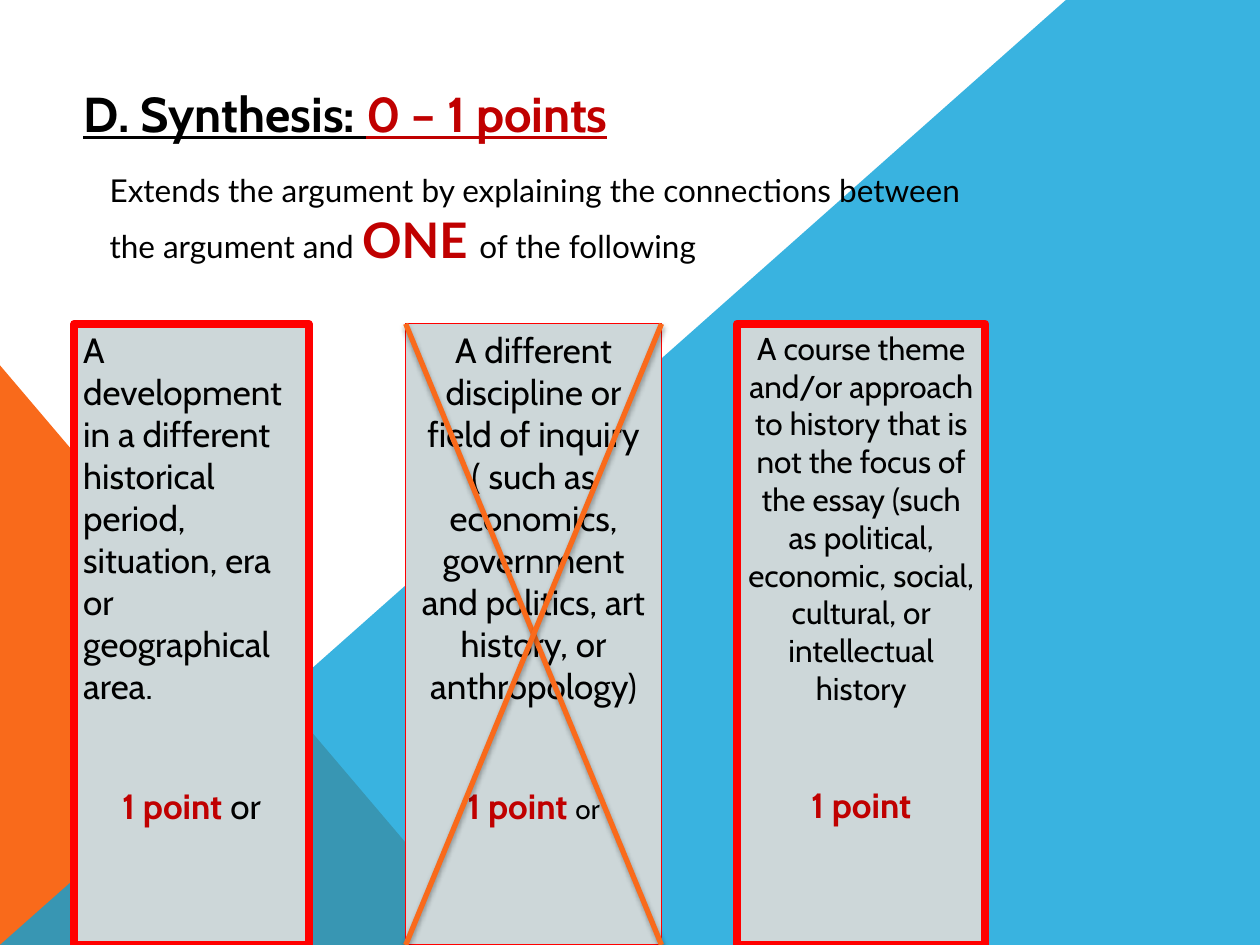
from lxml import etree
from pptx import Presentation
from pptx.dml.color import RGBColor
from pptx.enum.shapes import MSO_CONNECTOR, MSO_SHAPE
from pptx.enum.text import MSO_ANCHOR, MSO_AUTO_SIZE, PP_ALIGN
from pptx.oxml import parse_xml
from pptx.oxml.ns import nsdecls, qn
from pptx.util import Inches, Pt

RECTANGLE, TRIANGLE = MSO_SHAPE.RECTANGLE, MSO_SHAPE.RIGHT_TRIANGLE
STRAIGHT = MSO_CONNECTOR.STRAIGHT
LEFT, CENTER = PP_ALIGN.LEFT, PP_ALIGN.CENTER
TOP = MSO_ANCHOR.TOP
FIXED, GROW = MSO_AUTO_SIZE.NONE, MSO_AUTO_SIZE.SHAPE_TO_FIT_TEXT

COLORS = {
    "orange": "F96A1B",
    "blue": "08A1D9",
    "panel": "CDD7D9",
    "red": "FF0000",
    "accent": "C00000",
    "text": "000000",
}
FORMATS = {
    "title": {"name": "Cabin", "size": Pt(28), "bold": True, "underline": True},
    "lead": {"name": "Lato", "size": Pt(18), "bold": False},
    "emphasis": {"name": "Lato", "size": Pt(28), "bold": True},
    "option": {"name": "Cabin", "size": Pt(20), "bold": False},
    "small option": {"name": "Cabin", "size": Pt(18), "bold": False},
    "tiny option": {"name": "Cabin", "size": Pt(16), "bold": False},
    "points": {"name": "Cabin", "size": Pt(20), "bold": True},
}
TIGHT = (0.07, 0.04)
NORMAL = (0.1, 0.05)
PANEL_TOP, PANEL_HEIGHT = 2.57, 4.93
POINTS_GAP = 44


class SlideStyle:
    """Holds the style and the current slide, and draws each kind of element."""

    def __init__(self, page):
        self.page = page

    def color(self, name):
        return RGBColor.from_string(COLORS[name])

    def paint(self, shape, fill, line=None, width=0):
        shape.shadow.inherit = False
        shape.fill.solid()
        shape.fill.fore_color.rgb = self.color(fill)
        if line:
            shape.line.color.rgb = self.color(line)
            shape.line.width = Pt(width)
        else:
            shape.line.fill.background()

    def shape(self, kind, area, fill, line=None, width=0):
        shape = self.page.shapes.add_shape(kind, *map(Inches, area))
        self.paint(shape, fill, line, width)
        return shape

    def polygon(self, points, fill, opacity):
        corners = [tuple(map(Inches, point)) for point in points]
        builder = self.page.shapes.build_freeform(*corners[0])
        builder.add_line_segments(corners[1:], close=True)
        shape = builder.convert_to_shape()
        self.paint(shape, fill)
        tint = shape.element.spPr.find(qn("a:solidFill"))[0]
        etree.SubElement(tint, qn("a:alpha"), val=str(opacity * 1000))

    def frame(self, shape, margins, auto_size=FIXED):
        frame = shape.text_frame
        side, edge = map(Inches, margins)
        values = {
            "word_wrap": True, "auto_size": auto_size, "vertical_anchor": TOP,
            "margin_left": side, "margin_right": side,
            "margin_top": edge, "margin_bottom": edge,
        }
        for key, value in values.items():
            setattr(frame, key, value)
        return frame

    def add_spans(self, para, spans, align=LEFT, before=0):
        para.alignment = align
        para.space_before = Pt(before)
        for text, style, color in spans:
            span = para.add_run()
            span.text = text
            for key, value in FORMATS[style].items():
                setattr(span.font, key, value)
            span.font.color.rgb = self.color(color)

    def placeholder(self, box, area, spans, margins, auto_size=FIXED):
        for key, value in zip(("left", "top", "width", "height"), area):
            setattr(box, key, Inches(value))
        box.element.getparent().append(box.element)
        para = self.frame(box, margins, auto_size).paragraphs[0]
        self.add_spans(para, spans)
        return para

    def plain_body(self, para):
        properties = para._p.get_or_add_pPr()
        properties.set("marL", "0")
        properties.set("indent", "0")
        etree.SubElement(properties, qn("a:buNone"))

    def panel(self, left, width, border, text, style, align, points):
        area = (left, PANEL_TOP, width, PANEL_HEIGHT)
        box = self.shape(RECTANGLE, area, "panel", "red", border)
        frame = self.frame(box, TIGHT)
        self.add_spans(frame.paragraphs[0], [(text, style, "text")], align, 10)
        self.add_spans(frame.add_paragraph(), points, CENTER, POINTS_GAP)

    def stroke(self, start, end, color, width):
        line = self.page.shapes.add_connector(STRAIGHT, *map(Inches, start + end))
        line.line.color.rgb = self.color(color)
        line.line.width = Pt(width)
        line.element.spPr.append(parse_xml(
            f'<a:effectLst {nsdecls("a")}>'
            f'<a:outerShdw blurRad="{Pt(3.1)}" dist="{Pt(1.8)}" dir="5400000" rotWithShape="0">'
            f'<a:srgbClr val="{COLORS["text"]}"><a:alpha val="35000"/></a:srgbClr>'
            '</a:outerShdw></a:effectLst>'))


def main():
    deck = Presentation()
    deck.slide_width, deck.slide_height = Inches(10), Inches(7.5)
    page = deck.slides.add_slide(deck.slide_layouts[1])
    style = SlideStyle(page)

    style.shape(TRIANGLE, (0, 2.9, 3.91, 4.6), "orange")
    style.polygon([(0, 7.5), (8.46, 0), (10, 0), (10, 7.5)], "blue", 80)

    style.placeholder(page.shapes.title, (0.59, 0.62, 7.5, 0.88), [
        ("D. Synthesis: ", "title", "text"),
        ("0 – 1 points", "title", "accent"),
    ], TIGHT)
    lead = style.placeholder(page.placeholders[1], (0.77, 1.31, 7, 0.88), [
        ("Extends the argument by explaining the connections between "
         "the argument and ", "lead", "text"),
        ("ONE ", "emphasis", "accent"),
        ("of the following", "lead", "text"),
    ], NORMAL, GROW)
    style.plain_body(lead)

    point = ("1 point ", "points", "accent")
    panels = [
        (0.59, 1.86, 4.5,
         "A development in a different historical period, situation, era or "
         "geographical area.",
         "option", LEFT, [point, ("or", "option", "text")]),
        (3.22, 2.03, 0.75,
         "A different discipline or field of inquiry ( such as economics, "
         "government and politics, art history, or anthropology)",
         "option", CENTER, [point, ("or", "tiny option", "text")]),
        (5.85, 1.97, 4.5,
         "A course theme and/or approach to history that is not the focus of "
         "the essay (such as political, economic, social, cultural, or "
         "intellectual history",
         "small option", CENTER, [("1 point", "points", "accent")]),
    ]
    for panel in panels:
        style.panel(*panel)

    left, width = panels[1][:2]
    right, bottom = left + width, PANEL_TOP + PANEL_HEIGHT
    for start, end in ((left, right), (right, left)):
        style.stroke((start, PANEL_TOP), (end, bottom), "orange", 3)

    deck.save("out.pptx")


if __name__ == "__main__":
    main()
